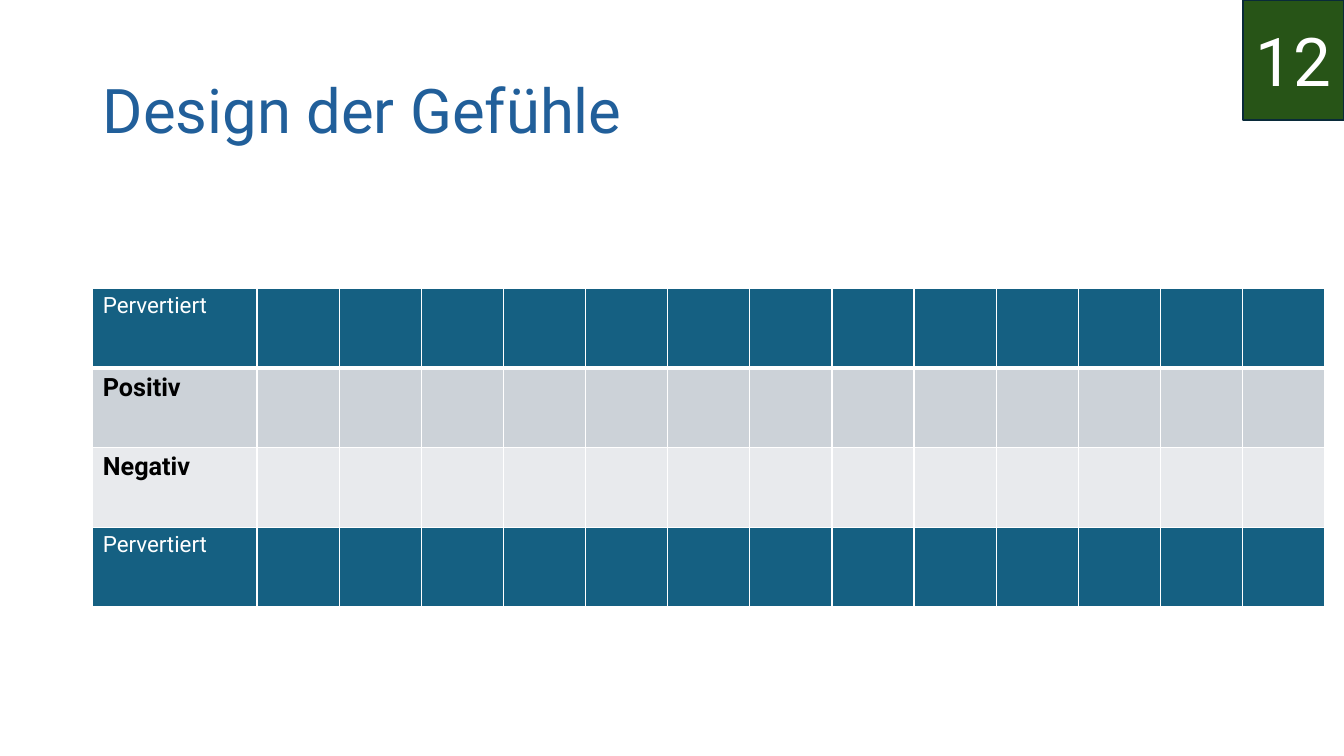
from lxml import etree
from pptx import Presentation
from pptx.dml.color import RGBColor
from pptx.enum.text import MSO_ANCHOR, PP_ALIGN
from pptx.enum.shapes import MSO_SHAPE
from pptx.oxml.ns import qn
from pptx.util import Inches, Pt

RECTANGLE = MSO_SHAPE.RECTANGLE
MIDDLE = MSO_ANCHOR.MIDDLE
LEFT, CENTER = PP_ALIGN.LEFT, PP_ALIGN.CENTER

WHITE = RGBColor(0xFF, 0xFF, 0xFF)
BLACK = RGBColor(0x00, 0x00, 0x00)
TITLE_BLUE = RGBColor(0x21, 0x5F, 0x9A)
PETROL = RGBColor(0x15, 0x60, 0x82)
GREY = RGBColor(0xCC, 0xD2, 0xD8)
PALE_GREY = RGBColor(0xE8, 0xEA, 0xED)
GREEN = RGBColor(0x27, 0x54, 0x17)
DARK_NAVY = RGBColor(0x09, 0x2A, 0x39)

MARGIN = Inches(0.92)
FEELING_COLUMNS = 13
COLUMN_WIDTH = Inches(12.22 / (FEELING_COLUMNS + 2))
ROW_HEIGHT = Inches(0.79)

# label, fill, text colour, text size, bold
FEELINGS = [
    ("Pervertiert", PETROL, WHITE, 16, False),
    ("Positiv", GREY, BLACK, 18, True),
    ("Negativ", PALE_GREY, BLACK, 18, True),
    ("Pervertiert", PETROL, WHITE, 16, False),
]


def write(frame, text, color, size, bold=False, align=LEFT):
    paragraph = frame.paragraphs[0]
    paragraph.text = text
    paragraph.alignment = align
    paragraph.font.color.rgb = color
    font_format = {"name": "Roboto", "size": Pt(size), "bold": bold}
    for attribute, value in font_format.items():
        setattr(paragraph.font, attribute, value)


def add_borders(cell, widths):
    """Draw white cell borders; widths maps a side (L, R, T, B) to points."""
    properties = cell._tc.get_or_add_tcPr()
    for side, width in widths.items():
        line = etree.SubElement(properties, qn(f"a:ln{side}"), w=str(Pt(width)))
        fill = etree.SubElement(line, qn("a:solidFill"))
        etree.SubElement(fill, qn("a:srgbClr"), val=str(WHITE))


presentation = Presentation()
presentation.slide_width = Inches(13.33)
presentation.slide_height = Inches(7.5)
slide = presentation.slides.add_slide(presentation.slide_layouts[5])

# Title
title = slide.shapes.title
title_place = {"left": MARGIN, "top": Inches(0.4),
               "width": Inches(11.5), "height": Inches(1.45)}
for attribute, value in title_place.items():
    setattr(title, attribute, value)
title.text_frame.vertical_anchor = MIDDLE
write(title.text_frame, "Design der Gefühle", TITLE_BLUE, 44)
title.text_frame.paragraphs[0].line_spacing = 0.9

# Table of feelings: a double-width label column and equal empty columns
feelings = slide.shapes.add_table(
    len(FEELINGS), FEELING_COLUMNS + 1, MARGIN, Inches(2.86),
    COLUMN_WIDTH * (FEELING_COLUMNS + 2), ROW_HEIGHT * len(FEELINGS)).table
for index, column in enumerate(feelings.columns):
    column.width = COLUMN_WIDTH * (2 if index == 0 else 1)

for index, (label, fill, color, size, bold) in enumerate(FEELINGS):
    row = feelings.rows[index]
    row.height = ROW_HEIGHT
    widths = {"L": 1, "R": 1,
              "T": 3 if index == 1 else 1, "B": 3 if index == 0 else 1}
    for cell in row.cells:
        add_borders(cell, widths)
        cell.fill.solid()
        cell.fill.fore_color.rgb = fill
    write(row.cells[0].text_frame, label, color, size, bold)

# Number badge in the top right corner
badge_width = Inches(1)
badge = slide.shapes.add_shape(
    RECTANGLE, presentation.slide_width - badge_width, 0, badge_width, Inches(1.19))
badge.shadow.inherit = False
badge.fill.solid()
badge.fill.fore_color.rgb = GREEN
badge.line.color.rgb = DARK_NAVY
badge.line.width = Pt(1.5)
badge.text_frame.vertical_anchor = MIDDLE
write(badge.text_frame, "12", WHITE, 48, align=CENTER)

presentation.save("out.pptx")
